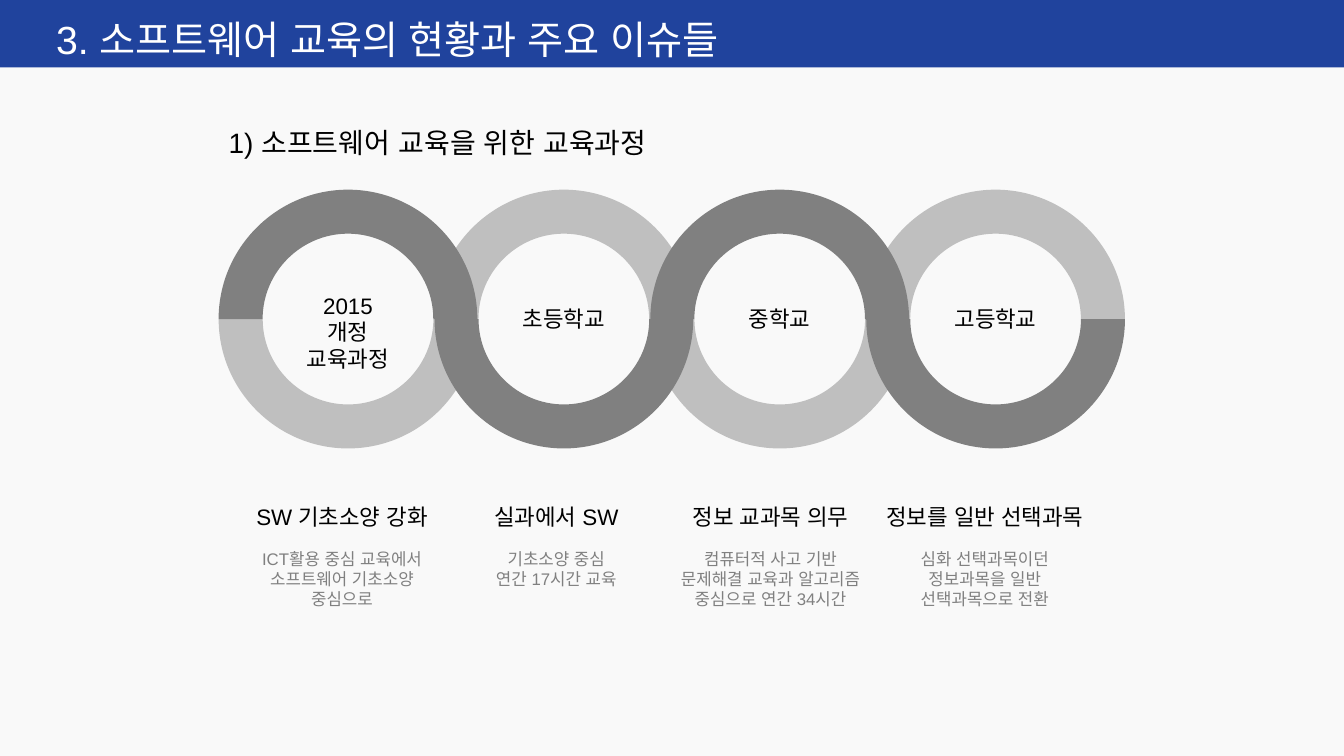
import lxml.etree
import pptx
import pptx.dml.color
import pptx.enum.shapes
import pptx.enum.text
import pptx.oxml.ns
import pptx.util

Cm = pptx.util.Cm
qn = pptx.oxml.ns.qn
ALIGN = pptx.enum.text.PP_ALIGN
FONT = "Arial"
COLOURS = {
    "background": "F9F9F9",
    "banner": "20439D",
    "title": "FFFFFF",
    "text": "000000",
    "dark": "808080",
    "light": "BFBFBF",
}
RING_PITCH, OUTER_RADIUS, INNER_RADIUS = 5.44, 3.26, 2.15
CAPTION_PITCH = 5.4
ROUNDNESS = 0.55

STAGES = [
    ("2015 개정\n교육과정", 2.8, 1.63),
    ("초등학교", 2.79, 0.94),
    ("중학교", 2.24, 0.94),
    ("고등학교", 2.79, 0.94),
]
CAPTIONS = [
    ("SW 기초소양 강화", 5.18, "ICT활용 중심 교육에서\n소프트웨어 기초소양\n중심으로", 4.85),
    ("실과에서 SW", 3.86, "기초소양 중심\n연간 17시간 교육", 3.78),
    ("정보 교과목 의무", 4.83, "컴퓨터적 사고 기반\n문제해결 교육과 알고리즘\n중심으로 연간 34시간", 5.46),
    ("정보를 일반 선택과목", 5.97, "심화 선택과목이던\n정보과목을 일반\n선택과목으로 전환", 4.06),
]


def rgb(name):
    return pptx.dml.color.RGBColor.from_string(COLOURS[name])


def write_text(box, text, size, colour, align, wrap=False):
    frame = box.text_frame
    frame.text = text
    frame.word_wrap = wrap
    frame.auto_size = pptx.enum.text.MSO_AUTO_SIZE.SHAPE_TO_FIT_TEXT
    frame.vertical_anchor = pptx.enum.text.MSO_ANCHOR.TOP
    for para in frame.paragraphs:
        para.alignment = align
        for span in para.runs:
            span.font.size = pptx.util.Pt(size)
            span.font.name = FONT
            span.font.color.rgb = rgb(colour)
            east_asian = lxml.etree.SubElement(span.font._element, qn("a:ea"))
            east_asian.set("typeface", FONT)


def add_text(page, left, top, width, height, text, size, colour, align, wrap=False):
    box = page.shapes.add_textbox(Cm(left), Cm(top), Cm(width), Cm(height))
    write_text(box, text, size, colour, align, wrap)


def paint(shape, colour):
    shape.fill.solid()
    shape.fill.fore_color.rgb = rgb(colour)
    shape.line.fill.background()
    shape.shadow.inherit = False


def add_banner(page, left, top, width, height):
    rectangle = pptx.enum.shapes.MSO_SHAPE.RECTANGLE
    banner = page.shapes.add_shape(rectangle, Cm(left), Cm(top), Cm(width), Cm(height))
    paint(banner, "banner")
    title = page.shapes.title
    title.left, title.top = Cm(left + 1.16), Cm(top + 0.25)
    title.width, title.height = Cm(18.69), Cm(1.45)
    write_text(title, "3. 소프트웨어 교육의 현황과 주요 이슈들", 28, "title", ALIGN.LEFT)
    banner.element.addnext(title.element)


def round_segment(segment, start, end, leaves_sideways):
    across, down = (end[0] - start[0]) * ROUNDNESS, (end[1] - start[1]) * ROUNDNESS
    if leaves_sideways:
        handles = [(start[0] + across, start[1]), (end[0], end[1] - down)]
    else:
        handles = [(start[0], start[1] + down), (end[0] - across, end[1])]
    segment.tag = qn("a:cubicBezTo")
    for handle in reversed(handles):
        point = lxml.etree.Element(qn("a:pt"), x=str(int(handle[0])), y=str(int(handle[1])))
        segment.insert(0, point)


def add_half_ring(page, left, top, colour, turned):
    near, far = OUTER_RADIUS - INNER_RADIUS, OUTER_RADIUS + INNER_RADIUS
    corners = [
        (OUTER_RADIUS, 0),
        (2 * OUTER_RADIUS, OUTER_RADIUS),
        (far, OUTER_RADIUS),
        (OUTER_RADIUS, near),
        (near, OUTER_RADIUS),
        (0, OUTER_RADIUS),
        (OUTER_RADIUS, 0),
    ]
    points = [(Cm(across), Cm(down)) for across, down in corners]
    builder = page.shapes.build_freeform(*points[0])
    builder.add_line_segments(points[1:-1], close=False)
    builder.add_line_segments(points[-1:], close=True)
    half = builder.convert_to_shape(Cm(left), Cm(top))
    segments = list(half.element.iter(qn("a:lnTo")))
    for index, leaves_sideways in ((0, True), (2, False), (3, True), (5, False)):
        round_segment(segments[index], points[index], points[index + 1], leaves_sideways)
    half.rotation = 180 if turned else 0
    paint(half, colour)


def add_ring_chain(page, left, top):
    middle = top + OUTER_RADIUS
    for colour, parity in (("light", 0), ("dark", 1)):
        for index in range(len(STAGES)):
            turned = index % 2 == parity
            half_top = middle if turned else top
            add_half_ring(page, left + index * RING_PITCH, half_top, colour, turned)
    for index, (label, width, height) in enumerate(STAGES):
        centre = left + OUTER_RADIUS + index * RING_PITCH
        add_text(page, centre - width / 2, middle - height / 2, width, height,
                 label, 16, "text", ALIGN.CENTER, wrap="\n" in label)


def add_captions(page, left, top):
    for index, (heading, heading_width, detail, detail_width) in enumerate(CAPTIONS):
        centre = left + CAPTION_PITCH * (index + 0.5)
        add_text(page, centre - heading_width / 2, top, heading_width, 0.94,
                 heading, 16, "text", ALIGN.CENTER)
        detail_height = 0.21 + 0.53 * (detail.count("\n") + 1)
        add_text(page, centre - detail_width / 2, top + 1.15, detail_width, detail_height,
                 detail, 12, "dark", ALIGN.CENTER)


def main():
    deck = pptx.Presentation()
    deck.slide_width, deck.slide_height = Cm(33.87), Cm(19.05)
    page = deck.slides.add_slide(deck.slide_layouts.get_by_name("Title Only"))
    page.background.fill.solid()
    page.background.fill.fore_color.rgb = rgb("background")
    add_captions(page, 5.92, 12.55)
    add_ring_chain(page, 5.51, 4.78)
    add_banner(page, 0, 0, 33.87, 1.7)
    add_text(page, 5.51, 3.04, 11.91, 1.12,
             "1) 소프트웨어 교육을 위한 교육과정", 20, "text", ALIGN.LEFT)
    deck.save("out.pptx")


if __name__ == "__main__":
    main()
